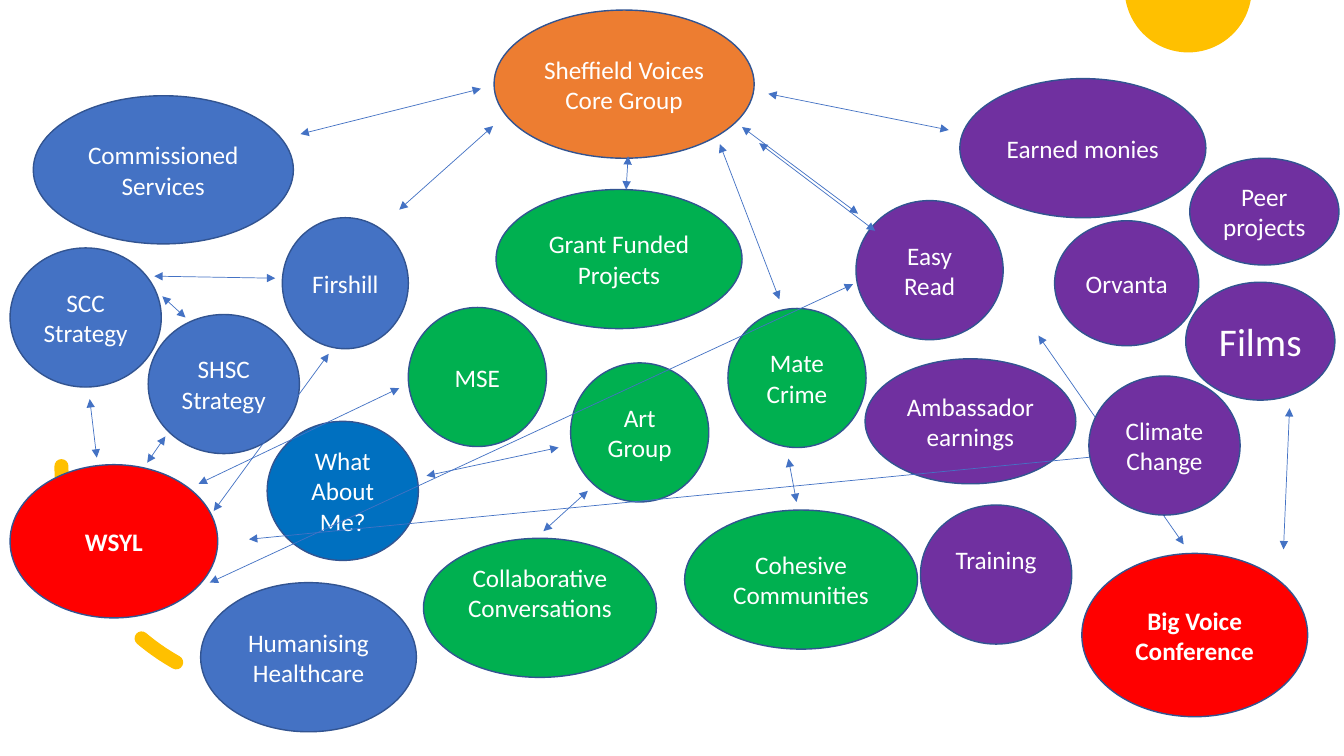
from dataclasses import dataclass
from math import cos, radians, sin

from lxml.etree import SubElement
from pptx import Presentation
from pptx.dml.color import RGBColor
from pptx.enum.dml import MSO_LINE
from pptx.enum.shapes import MSO_CONNECTOR, MSO_SHAPE
from pptx.enum.text import MSO_ANCHOR, PP_ALIGN
from pptx.oxml.ns import qn
from pptx.util import Inches, Pt


@dataclass(frozen=True)
class Theme:
    font: str = "Calibri"
    text: str = "FFFFFF"
    outline: str = "325491"
    arrow: str = "4472C4"
    sun: str = "FFC000"
    core: str = "ED7D31"
    commissioned: str = "4472C4"
    person: str = "0070C0"
    funded: str = "00B050"
    earned: str = "7030A0"
    event: str = "FF0000"
    label_size: int = 18
    feature_size: int = 28
    outline_width: float = 1
    arrow_width: float = 0.5
    arc_width: float = 10


THEME = Theme()
WIDTH, HEIGHT = 13.33, 7.5
COLUMNS, ROWS = 1333, 750

LARGE, MEDIUM, SMALL = (258, 147), (244, 138), (150, 138)
ROUND, WIDE = (137, 138), (231, 138)
FEATURE = "Films"
RAISED = ("Collaborative Conversations", "Training")

BACK_BUBBLES = [
    ("Commissioned Services", "commissioned", (33, 95), LARGE),
    ("Grant Funded Projects", "funded", (492, 188), MEDIUM),
    ("Peer projects", "earned", (1180, 157), (148, 106)),
    ("Earned monies", "earned", (952, 78), MEDIUM),
    ("Easy Read", "earned", (849, 199), (146, 138)),
    ("SCC Strategy", "commissioned", (10, 246), SMALL),
    ("Mate Crime", "funded", (722, 306), ROUND),
    ("Ambassador earnings", "earned", (858, 356), (209, 124)),
    ("Firshill", "commissioned", (280, 216), (125, 130)),
    ("MSE", "funded", (405, 305), ROUND),
    ("Art Group", "funded", (566, 360), ROUND),
    ("SHSC Strategy", "commissioned", (147, 312), SMALL),
    ("Orvanta", "earned", (1046, 219), (143, 124)),
    (FEATURE, "earned", (1176, 280), (148, 117)),
    ("What About Me?", "person", (265, 418), SMALL),
    ("Humanising Healthcare", "commissioned", (199, 578), (214, 148)),
    ("Sheffield Voices Core Group", "core", (490, 10), LARGE),
    ("Collaborative Conversations", "funded", (420, 534), WIDE),
    ("Cohesive Communities", "funded", (679, 506), WIDE),
    ("WSYL", "event", (10, 461), (206, 152)),
]

FRONT_BUBBLES = [
    ("Big Voice Conference", "event", (1073, 549), (224, 162)),
    ("Training", "earned", (913, 501), SMALL),
    ("Climate Change", "earned", (1080, 373), SMALL),
]

ARROWS = [
    ((477, 88), (298, 133)),
    ((489, 125), (396, 208)),
    ((762, 93), (941, 129)),
    ((736, 126), (851, 212)),
    ((623, 155), (621, 188)),
    ((554, 444), (423, 472)),
    ((583, 487), (539, 527)),
    ((396, 385), (197, 480)),
    ((326, 351), (212, 507)),
    ((89, 396), (96, 454)),
    ((1169, 445), (247, 535)),
    ((714, 143), (773, 297)),
    ((782, 455), (790, 498)),
    ((164, 433), (146, 459)),
    ((208, 578), (846, 282)),
    ((1030, 333), (1174, 540)),
    ((1279, 405), (1273, 545)),
    ((753, 142), (868, 229)),
    ((273, 276), (153, 274)),
    ((184, 315), (161, 294)),
]

SUN_CENTRE, SUN_RADIUS, SUN_EDGE_ANGLE = (1178.5, -11), 63, 10
ARC_POSITION, ARC_SIZE = (61, 239), (447, 447)


def across(columns):
    return Inches(columns * WIDTH / COLUMNS)


def down(rows):
    return Inches(rows * HEIGHT / ROWS)


def box(position, size):
    return across(position[0]), down(position[1]), across(size[0]), down(size[1])


def paint(fill, color):
    fill.solid()
    fill.fore_color.rgb = RGBColor.from_string(color)


def stroke(line, color, width):
    paint(line.fill, color)
    line.width = Pt(width)


def add_sun(slide):
    angles = range(SUN_EDGE_ANGLE, 181 - SUN_EDGE_ANGLE, 2)
    points = [
        (
            across(SUN_CENTRE[0] + SUN_RADIUS * cos(radians(angle))),
            down(max(0, SUN_CENTRE[1] + SUN_RADIUS * sin(radians(angle)))),
        )
        for angle in angles
    ]
    builder = slide.shapes.build_freeform(*points[0])
    builder.add_line_segments(points[1:], close=True)
    sun = builder.convert_to_shape()
    sun.shadow.inherit = False
    paint(sun.fill, THEME.sun)
    sun.line.fill.background()


def add_arc(slide):
    arc = slide.shapes.add_shape(MSO_SHAPE.ARC, *box(ARC_POSITION, ARC_SIZE))
    arc.shadow.inherit = False
    arc.fill.background()
    stroke(arc.line, THEME.sun, THEME.arc_width)
    arc.line.dash_style = MSO_LINE.DASH
    arc.rotation = 90
    properties = arc.element.spPr
    properties.find(qn("a:xfrm")).set("flipV", "1")
    properties.find(qn("a:ln")).set("cap", "rnd")


def place_feature(slide, frame):
    shape = slide.placeholders[1]
    shape.left, shape.top, shape.width, shape.height = frame
    geometry = SubElement(shape.element.spPr, qn("a:prstGeom"), prst="ellipse")
    SubElement(geometry, qn("a:avLst"))
    slide.shapes.element.append(shape.element)
    properties = shape.text_frame.paragraphs[0]._p.get_or_add_pPr()
    properties.set("marL", "0")
    properties.set("indent", "0")
    SubElement(properties, qn("a:buNone"))
    return shape


def add_bubble(slide, label, group, position, size):
    frame = box(position, size)
    if label == FEATURE:
        shape = place_feature(slide, frame)
    else:
        shape = slide.shapes.add_shape(MSO_SHAPE.OVAL, *frame)
        shape.shadow.inherit = False
    paint(shape.fill, getattr(THEME, group))
    stroke(shape.line, THEME.outline, THEME.outline_width)

    text_frame = shape.text_frame
    text_frame.word_wrap = True
    text_frame.vertical_anchor = MSO_ANCHOR.MIDDLE
    text_frame.margin_left = text_frame.margin_right = across(8)
    text_frame.margin_top = down(5)
    text_frame.margin_bottom = down(35 if label in RAISED else 5)
    paragraph = text_frame.paragraphs[0]
    paragraph.text = label
    paragraph.alignment = PP_ALIGN.CENTER
    paragraph.space_before = Pt(0)
    font = paragraph.font
    font.name = THEME.font
    font.size = Pt(THEME.feature_size if label == FEATURE else THEME.label_size)
    font.bold = group == "event"
    font.color.rgb = RGBColor.from_string(THEME.text)


def add_arrow(slide, start, end):
    arrow = slide.shapes.add_connector(
        MSO_CONNECTOR.STRAIGHT,
        across(start[0]), down(start[1]), across(end[0]), down(end[1]),
    )
    stroke(arrow.line, THEME.arrow, THEME.arrow_width)
    properties = arrow.element.spPr
    for tip in ("a:headEnd", "a:tailEnd"):
        SubElement(properties.find(qn("a:ln")), qn(tip), type="triangle")
    SubElement(properties, qn("a:effectLst"))


def main():
    presentation = Presentation()
    presentation.slide_width, presentation.slide_height = Inches(WIDTH), Inches(HEIGHT)
    slide = presentation.slides.add_slide(presentation.slide_layouts[1])
    slide.shapes.element.remove(slide.shapes.title.element)
    add_sun(slide)
    add_arc(slide)
    for bubble in BACK_BUBBLES:
        add_bubble(slide, *bubble)
    for start, end in ARROWS:
        add_arrow(slide, start, end)
    for bubble in FRONT_BUBBLES:
        add_bubble(slide, *bubble)
    presentation.save("out.pptx")


if __name__ == "__main__":
    main()
